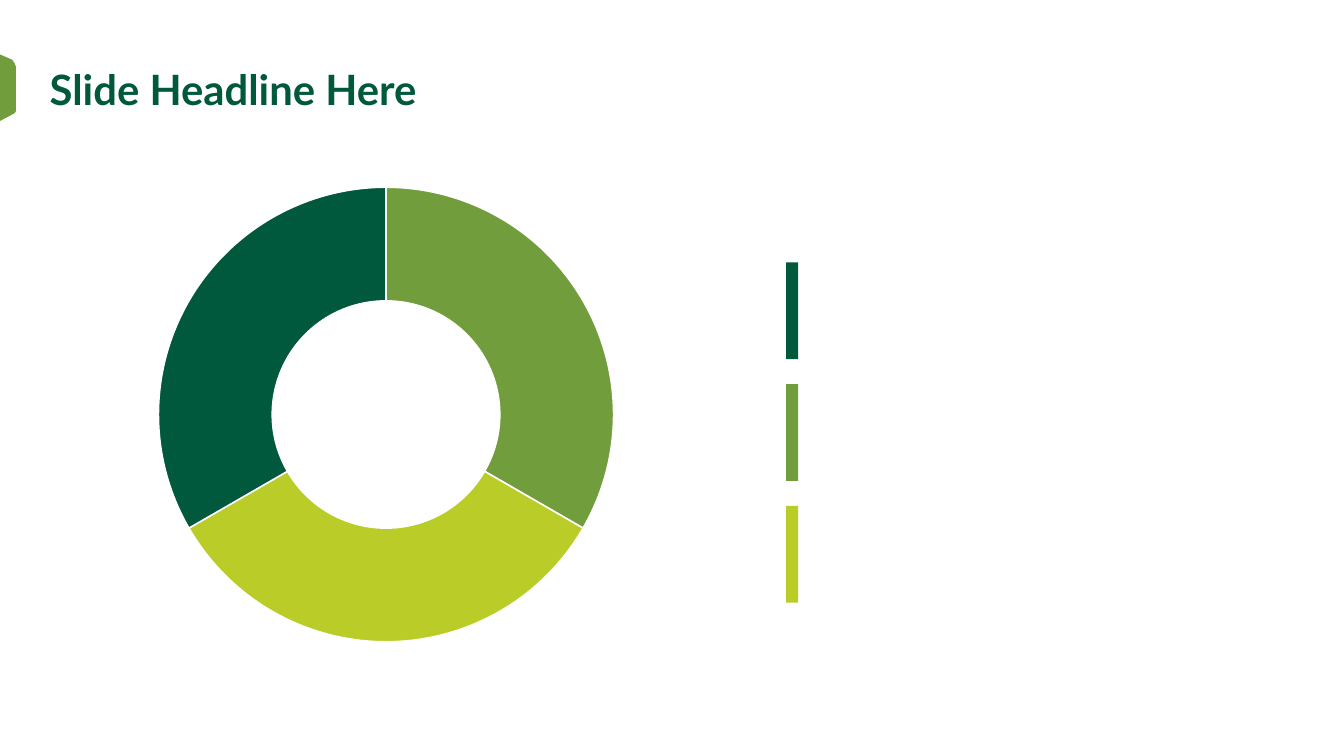
from lxml.etree import SubElement
from pptx import Presentation
from pptx.chart.data import CategoryChartData
from pptx.dml.color import RGBColor
from pptx.enum.chart import XL_CHART_TYPE
from pptx.enum.shapes import MSO_SHAPE
from pptx.enum.text import MSO_ANCHOR
from pptx.oxml.ns import qn
from pptx.util import Inches, Pt

DARK_GREEN = RGBColor(0x00, 0x58, 0x3D)
GREEN = RGBColor(0x71, 0x9D, 0x3D)
LIME = RGBColor(0xBA, 0xCC, 0x28)
WHITE = RGBColor(0xFF, 0xFF, 0xFF)
BLACK = RGBColor(0x00, 0x00, 0x00)
FONT = "Lato"

HEADLINE = "Slide Headline Here"
SLICES = [("1", 33, GREEN), ("2", 33, LIME), ("3", 33, DARK_GREEN)]
HOLE_SIZE = 45
PLOT_LAYOUT = [("x", 0), ("y", 0.141), ("w", 0.573), ("h", 0.859)]
KEY_COLORS = [DARK_GREEN, GREEN, LIME]
KEY_LEFT, KEY_TOP, KEY_WIDTH, KEY_HEIGHT, KEY_STEP = 10.4, 3.47, 0.16, 1.28, 1.61
TAB_POINTS = [
    (0, 0.72), (0, 1.6), (0.17, 1.51), (0.19, 1.5), (0.2, 1.49), (0.21, 1.47),
    (0.21, 0.88), (0.19, 0.83), (0.16, 0.79),
]


def paint(shape, color):
    shape.shadow.inherit = False
    shape.fill.solid()
    shape.fill.fore_color.rgb = color
    shape.line.fill.background()


def add_text(slide, text, left, top, width, height, size, color, bold=False):
    box = slide.shapes.add_textbox(Inches(left), Inches(top), Inches(width), Inches(height))
    frame = box.text_frame
    frame.word_wrap = True
    frame.vertical_anchor = MSO_ANCHOR.MIDDLE
    span = frame.paragraphs[0].add_run()
    span.text = text
    span.font.name = FONT
    span.font.size = Pt(size)
    span.font.bold = bold
    span.font.color.rgb = color


def add_key_bars(slide):
    for index, color in enumerate(KEY_COLORS):
        bar = slide.shapes.add_shape(
            MSO_SHAPE.RECTANGLE, Inches(KEY_LEFT), Inches(KEY_TOP + index * KEY_STEP),
            Inches(KEY_WIDTH), Inches(KEY_HEIGHT))
        paint(bar, color)


def add_edge_tab(slide):
    points = [(Inches(x), Inches(y)) for x, y in TAB_POINTS]
    builder = slide.shapes.build_freeform(*points[0], scale=1.0)
    builder.add_line_segments(points[1:], close=True)
    paint(builder.convert_to_shape(), GREEN)


def add_doughnut(slide):
    data = CategoryChartData()
    data.categories = [name for name, value, color in SLICES]
    data.add_series("Series 1", [value for name, value, color in SLICES])
    chart = slide.shapes.add_chart(
        XL_CHART_TYPE.DOUGHNUT, Inches(2.05), Inches(1.49), Inches(10.67), Inches(7.01), data).chart
    chart.has_legend = False
    chart.has_title = False
    chart.font.name = FONT
    chart.font.size = Pt(10)
    chart.font.color.rgb = BLACK

    plot = chart.plots[0]
    plot.vary_by_categories = True
    for index, (name, value, color) in enumerate(SLICES):
        style = plot.series[0].points[index].format
        style.fill.solid()
        style.fill.fore_color.rgb = color
        style.line.color.rgb = WHITE
        style.line.width = Pt(1.5)

    plot_area = chart.element.find(".//" + qn("c:plotArea"))
    plot_area.find(".//" + qn("c:holeSize")).set("val", str(HOLE_SIZE))
    layout = plot_area.find(qn("c:layout"))
    if layout is None:
        layout = SubElement(plot_area, qn("c:layout"))
        plot_area.insert(0, layout)
    manual = SubElement(layout, qn("c:manualLayout"))
    settings = [("layoutTarget", "inner"), ("xMode", "edge"), ("yMode", "edge"), *PLOT_LAYOUT]
    for tag, value in settings:
        SubElement(manual, qn(f"c:{tag}")).set("val", str(value))


def main():
    deck = Presentation()
    deck.slide_width = Inches(17.78)
    deck.slide_height = Inches(10)
    page = deck.slides.add_slide(deck.slide_layouts[6])
    page.background.fill.solid()
    page.background.fill.fore_color.rgb = WHITE
    add_key_bars(page)
    add_edge_tab(page)
    add_text(page, HEADLINE, 0.56, 0.8, 16.33, 0.75, size=39.8, color=DARK_GREEN, bold=True)
    add_doughnut(page)
    deck.save("out.pptx")


if __name__ == "__main__":
    main()
